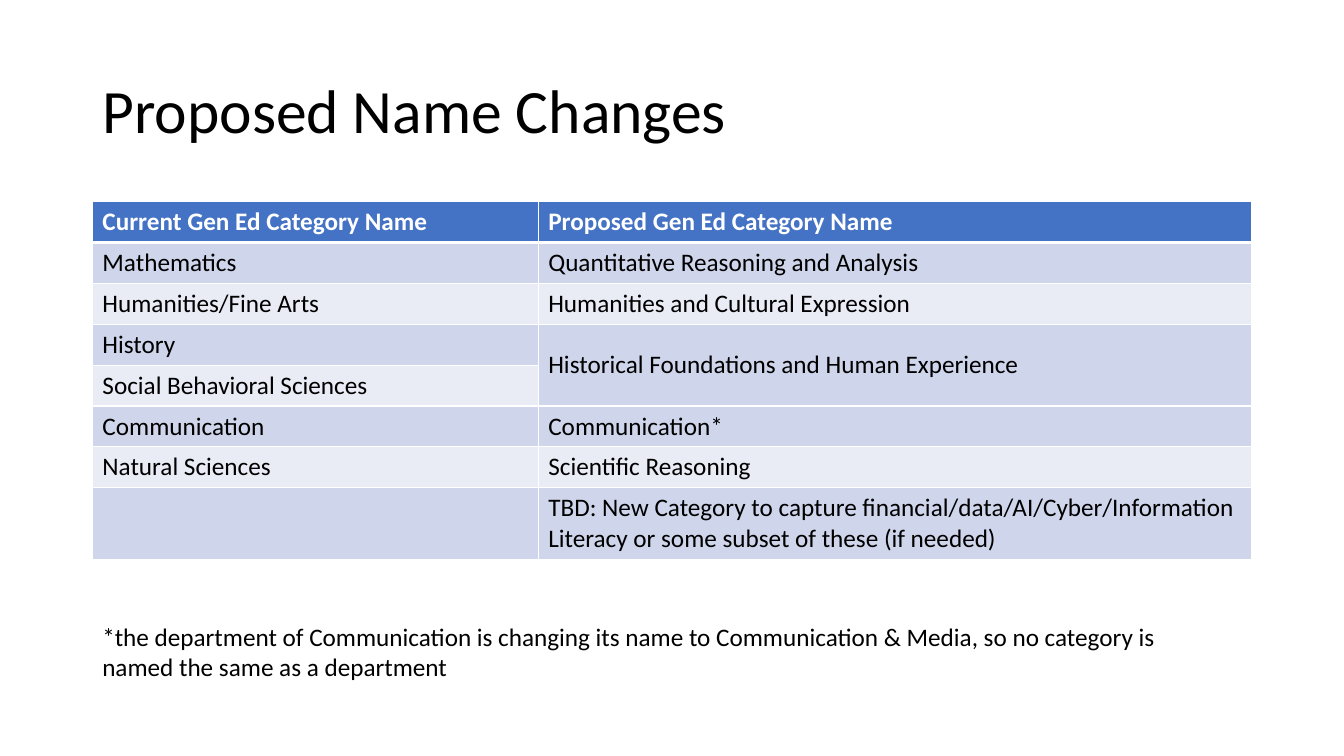
from lxml import etree
from pptx import Presentation
from pptx.dml.color import RGBColor
from pptx.enum import text
from pptx.oxml import ns
from pptx.util import Pt

COLORS = {"ink": "000000", "white": "FFFFFF", "header": "4472C4",
          "odd": "CFD5EA", "even": "E9EBF5"}
ROWS = [
    ("Current Gen Ed Category Name", "Proposed Gen Ed Category Name"),
    ("Mathematics", "Quantitative Reasoning and Analysis"),
    ("Humanities/Fine Arts", "Humanities and Cultural Expression"),
    ("History", "Historical Foundations and Human Experience"),
    ("Social Behavioral Sciences", ""),
    ("Communication", "Communication*"),
    ("Natural Sciences", "Scientific Reasoning"),
    ("", "TBD: New Category to capture financial/data/AI/Cyber/Information "
         "Literacy or some subset of these (if needed)"),
]
MERGED_ROWS = (3, 4)
NOTE = ("*the department of Communication is changing its name to "
        "Communication & Media, so no category is named the same as a department")


def style_text(tf, size, color="ink", bold=False):
    """Format every run of a text frame."""
    for p in tf.paragraphs:
        p.alignment = text.PP_ALIGN.LEFT
        for r in p.runs:
            r.font.name = "Calibri"
            r.font.size = Pt(size)
            r.font.bold = bold
            r.font.color.rgb = RGBColor.from_string(COLORS[color])


def set_borders(cell, top, bottom):
    """Draw white borders of the given top and bottom widths."""
    tcPr = cell._tc.get_or_add_tcPr()
    for side, width in (("L", 1), ("R", 1), ("T", top), ("B", bottom)):
        ln = etree.SubElement(tcPr, ns.qn(f"a:ln{side}"), w=str(Pt(width)))
        fill = etree.SubElement(ln, ns.qn("a:solidFill"))
        etree.SubElement(fill, ns.qn("a:srgbClr"), val=COLORS["white"])


def add_title(s, x, y, w, h):
    """Place the slide title in its box."""
    sp = s.shapes.title
    sp.left, sp.top, sp.width, sp.height = Pt(x), Pt(y), Pt(w), Pt(h)
    tf = sp.text_frame
    tf.text = "Proposed Name Changes"
    tf.word_wrap = True
    tf.auto_size = text.MSO_AUTO_SIZE.NONE
    tf.vertical_anchor = text.MSO_ANCHOR.MIDDLE
    tf.paragraphs[0].line_spacing = 0.9
    style_text(tf, 44)


def add_names_table(s, x, y, w, h):
    """Fill the table of current and proposed category names."""
    tbl = s.shapes.add_table(len(ROWS), 2, Pt(x), Pt(y), Pt(w), Pt(h)).table
    first_width, row_height = 318.5, 29.2
    tbl.columns[0].width = Pt(first_width)
    tbl.columns[1].width = Pt(w - first_width)
    last = len(ROWS) - 1
    for i, names in enumerate(ROWS):
        tbl.rows[i].height = Pt(row_height if i < last else h - last * row_height)
        band = "header" if i == 0 else "odd" if i % 2 else "even"
        for j, name in enumerate(names):
            cell = tbl.cell(i, j)
            cell.text_frame.text = name
            style_text(cell.text_frame, 18, "ink" if i else "white", i == 0)
            set_borders(cell, 3 if i == 1 else 1, 1 if i else 3)
            cell.fill.solid()
            cell.fill.fore_color.rgb = RGBColor.from_string(COLORS[band])
    first, second = MERGED_ROWS
    tbl.cell(first, 1).merge(tbl.cell(second, 1))
    tbl.cell(first, 1).vertical_anchor = text.MSO_ANCHOR.MIDDLE


def add_note(s, x, y, w, h):
    """Add the footnote below the table."""
    tf = s.shapes.add_textbox(Pt(x), Pt(y), Pt(w), Pt(h)).text_frame
    tf.text = NOTE
    tf.word_wrap = True
    tf.auto_size = text.MSO_AUTO_SIZE.SHAPE_TO_FIT_TEXT
    style_text(tf, 18)


def main():
    """Build the slide and save it."""
    prs = Presentation()
    prs.slide_width, prs.slide_height = Pt(960), Pt(540)
    s = prs.slides.add_slide(prs.slide_layouts.get_by_name("Title Only"))
    left, width = 66, 828
    add_title(s, left, 28.75, width, 104.4)
    add_names_table(s, left, 144, width, 254.8)
    add_note(s, left, 440, 817, 51)
    prs.save("out.pptx")


if __name__ == "__main__":
    main()
